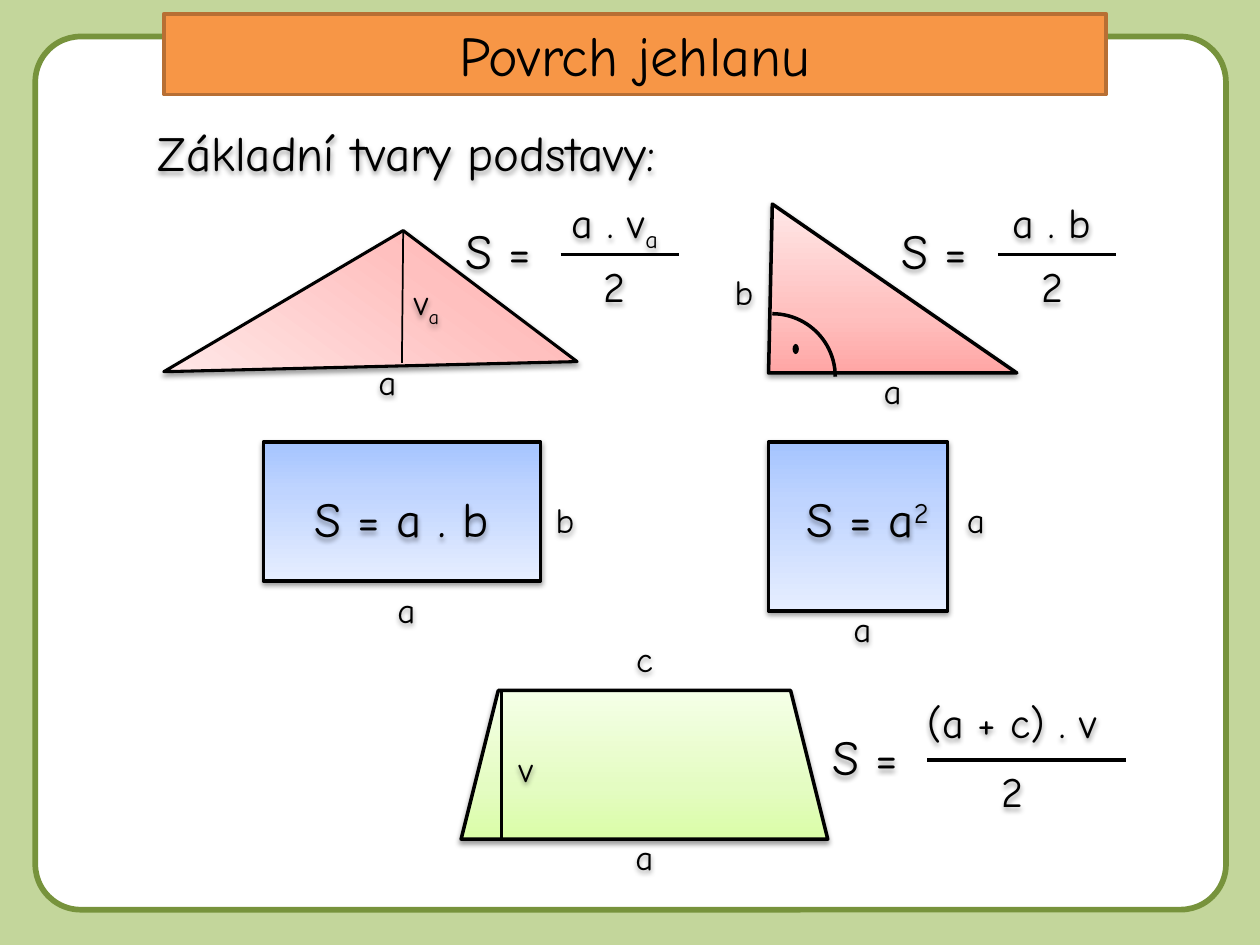
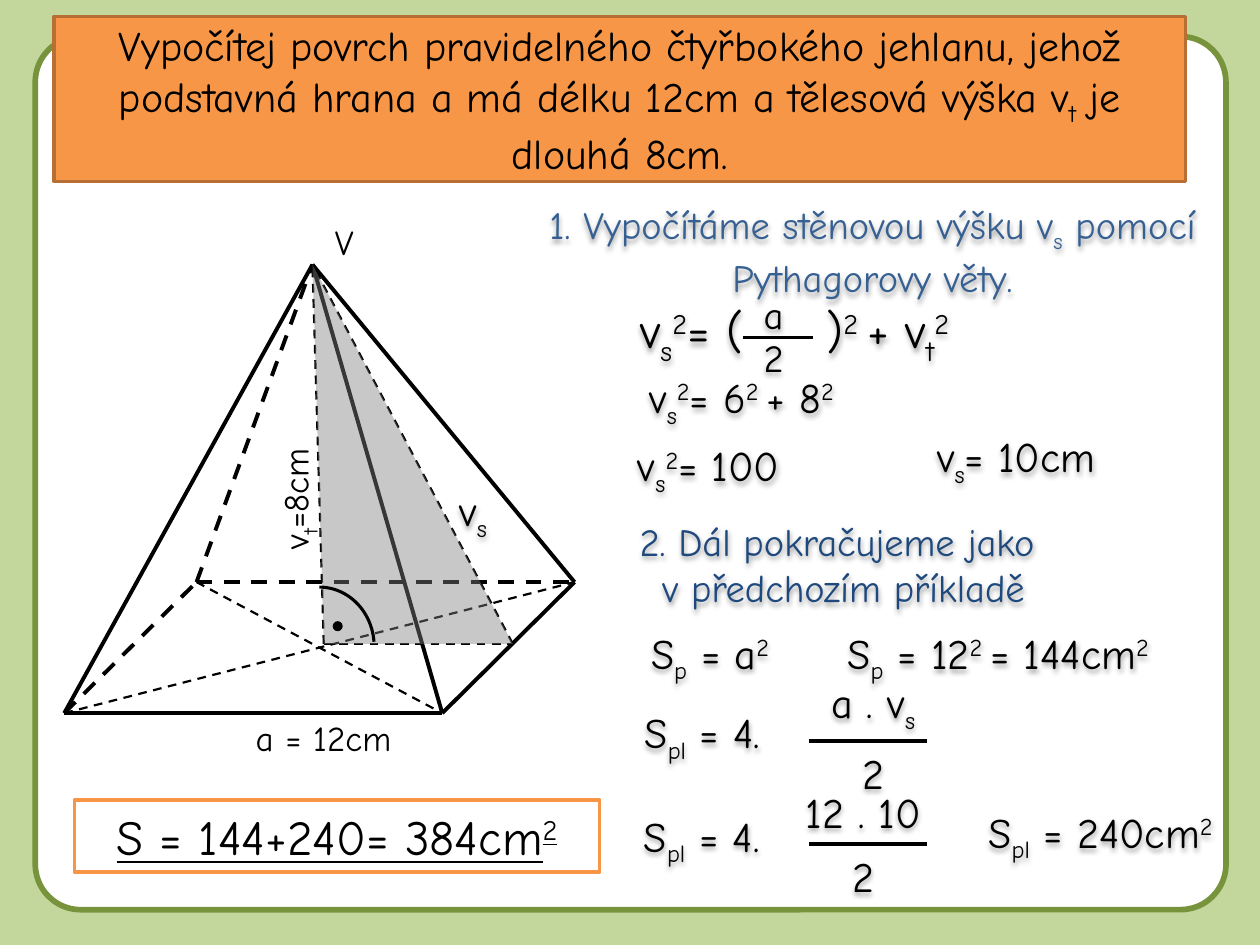
from dataclasses import dataclass

import pptx
import pptx.dml.color
import pptx.enum.dml
import pptx.enum.shapes
import pptx.enum.text
import pptx.oxml
import pptx.oxml.ns
import pptx.util

Inches = pptx.util.Inches
Pt = pptx.util.Pt
Preset = pptx.enum.shapes.MSO_SHAPE
Align = pptx.enum.text.PP_ALIGN
qn = pptx.oxml.ns.qn
NAMESPACE = pptx.oxml.ns.nsdecls("a")

FONT = "Comic Neue"
COLORS = {
    "background": "C3D69B",
    "frame": "77933C",
    "paper": "FFFFFF",
    "ink": "000000",
    "banner": "F79646",
    "banner_edge": "B76F34",
    "section": "376092",
    "next_section": "1F497D",
    "cut": "808080",
}
RED = ("FFA6A5", "FFC0BF", "FFE7E7")
BLUE = ("A4C4FF", "BFD4FF", "E6EEFF")
GREEN = ("DAFDA7", "E4FCC2", "F5FFE7")
GRADIENT_STOPS = (0, 35, 100)


@dataclass(frozen=True)
class Run:
    text: str
    baseline: int = 0


@dataclass(frozen=True)
class Label:
    left: float
    top: float
    width: float
    runs: tuple
    size: int = 20
    color: str = "ink"
    shadow: bool = True
    align: Align = Align.CENTER
    rotation: int = 0
    rows: int = 1
    inset: float = 0.1
    tab: float = 0


@dataclass(frozen=True)
class Box:
    left: float
    top: float
    width: float
    height: float
    preset: Preset = Preset.RECTANGLE
    fill: str = ""
    line: str = ""
    line_width: float = 2
    adjustments: tuple = ()


@dataclass(frozen=True)
class Segment:
    start: tuple
    end: tuple
    width: float = 2
    dashed: bool = False


@dataclass(frozen=True)
class Fraction:
    bar_start: float
    bar_end: float
    bar_y: float
    top: Label
    bottom: Label


def sub(text: str) -> Run:
    return Run(text, -25000)


def sup(text: str) -> Run:
    return Run(text, 30000)


def rgb(name: str) -> pptx.dml.color.RGBColor:
    return pptx.dml.color.RGBColor.from_string(COLORS[name])


def add_shadow(shape) -> None:
    shape.shadow.inherit = False
    effects = shape.element.spPr.find(qn("a:effectLst"))
    effects.append(pptx.oxml.parse_xml(
        f'<a:outerShdw {NAMESPACE} blurRad="{Pt(3.1)}" dist="{Pt(1.6)}" dir="5400000" rotWithShape="0">'
        f'<a:srgbClr val="{COLORS["ink"]}"><a:alpha val="38000"/></a:srgbClr></a:outerShdw>'))


def fill_gradient(shape, colors: tuple, angle: float) -> None:
    shape.fill.gradient()
    shape.fill.gradient_angle = angle
    stops = shape.element.spPr.find(qn("a:gradFill")).find(qn("a:gsLst"))
    for stop in list(stops):
        stops.remove(stop)
    for position, color in zip(GRADIENT_STOPS, colors):
        stops.append(pptx.oxml.parse_xml(
            f'<a:gs {NAMESPACE} pos="{position * 1000}"><a:srgbClr val="{color}"/></a:gs>'))


def style_figure(shape, colors: tuple, angle: float, line_width: float = 2) -> None:
    fill_gradient(shape, colors, angle)
    shape.line.color.rgb = rgb("ink")
    shape.line.width = Pt(line_width)
    add_shadow(shape)


def add_runs(paragraph, runs: tuple, size: int, color: str = "ink", underline: bool = False) -> None:
    for item in runs:
        part = Run(item) if isinstance(item, str) else item
        run = paragraph.add_run()
        run.text = part.text
        run.font.name = FONT
        run.font.size = Pt(size)
        run.font.color.rgb = rgb(color)
        if underline:
            run.font.underline = True
        if part.baseline:
            run._r.get_or_add_rPr().set("baseline", str(part.baseline))


def add_label(slide, label: Label) -> None:
    height = 0.1 + label.rows * label.size / 60
    shape = slide.shapes.add_textbox(
        Inches(label.left), Inches(label.top), Inches(label.width), Inches(height))
    shape.rotation = label.rotation
    frame = shape.text_frame
    frame.word_wrap = True
    frame.auto_size = pptx.enum.text.MSO_AUTO_SIZE.SHAPE_TO_FIT_TEXT
    frame.margin_left = Inches(label.inset)
    lines = label.runs if isinstance(label.runs[0], tuple) else (label.runs,)
    for index, runs in enumerate(lines):
        paragraph = frame.add_paragraph() if index else frame.paragraphs[0]
        paragraph.alignment = label.align
        if label.tab:
            paragraph._p.get_or_add_pPr().append(pptx.oxml.parse_xml(
                f'<a:tabLst {NAMESPACE}><a:tab pos="{Inches(label.tab)}" algn="l"/></a:tabLst>'))
        add_runs(paragraph, runs, label.size, label.color)
    if label.shadow:
        add_shadow(shape)


def add_box(slide, box: Box):
    shape = slide.shapes.add_shape(
        box.preset, Inches(box.left), Inches(box.top), Inches(box.width), Inches(box.height))
    for index, value in enumerate(box.adjustments):
        shape.adjustments[index] = value
    shape.shadow.inherit = False
    if box.fill:
        shape.fill.solid()
        shape.fill.fore_color.rgb = rgb(box.fill)
    else:
        shape.fill.background()
    if box.line:
        shape.line.color.rgb = rgb(box.line)
        shape.line.width = Pt(box.line_width)
    else:
        shape.line.fill.background()
    return shape


def add_text_box(slide, box: Box, runs: tuple, size: int, underline: bool = False) -> None:
    frame = add_box(slide, box).text_frame
    frame.word_wrap = True
    frame.paragraphs[0].alignment = Align.CENTER
    add_runs(frame.paragraphs[0], runs, size, underline=underline)


def add_segment(slide, segment: Segment) -> None:
    points = [Inches(value) for value in segment.start + segment.end]
    connector = slide.shapes.add_connector(pptx.enum.shapes.MSO_CONNECTOR.STRAIGHT, *points)
    connector.line.color.rgb = rgb("ink")
    connector.line.width = Pt(segment.width)
    if segment.dashed:
        connector.line.dash_style = pptx.enum.dml.MSO_LINE.DASH
    connector.element.spPr.append(pptx.oxml.parse_xml(f"<a:effectLst {NAMESPACE}/>"))


def add_fraction(slide, fraction: Fraction) -> None:
    add_segment(slide, Segment((fraction.bar_start, fraction.bar_y), (fraction.bar_end, fraction.bar_y)))
    add_label(slide, fraction.top)
    add_label(slide, fraction.bottom)


def add_polygon(slide, points: tuple):
    start, *others = [(Inches(x), Inches(y)) for x, y in points]
    builder = slide.shapes.build_freeform(*start, scale=1.0)
    builder.add_line_segments(others, close=True)
    return builder.convert_to_shape()


def add_framed_slide(presentation, banner: Box, title: tuple, size: int):
    slide = presentation.slides.add_slide(presentation.slide_layouts[6])
    slide.background.fill.solid()
    slide.background.fill.fore_color.rgb = rgb("background")
    add_box(slide, Box(0.28, 0.29, 9.45, 6.93, Preset.ROUNDED_RECTANGLE, "paper", "frame", 3.25, (0.052,)))
    add_text_box(slide, banner, title, size)
    return slide


def build_base_shapes(presentation) -> None:
    banner = Box(1.3, 0.11, 7.48, 0.64, fill="banner", line="banner_edge")
    slide = add_framed_slide(presentation, banner, ("Povrch jehlanu",), 32)

    for box in (Box(2.09, 3.51, 2.2, 1.1), Box(6.1, 3.51, 1.42, 1.34)):
        style_figure(add_box(slide, box), BLUE, 270)
    trapezoid = Box(3.66, 5.48, 2.91, 1.18, Preset.TRAPEZOID)
    style_figure(add_box(slide, trapezoid), GREEN, 90)
    right_triangle = ((6.13, 1.62), (6.1, 2.96), (8.07, 2.96))
    style_figure(add_polygon(slide, right_triangle), RED, 90)
    triangle = ((4.58, 2.87), (3.2, 1.83), (1.3, 2.95))
    style_figure(add_polygon(slide, triangle), RED, 234.1, 1.75)

    add_box(slide, Box(5.63, 2.49, 1, 1, Preset.ARC, line="ink"))
    add_box(slide, Box(6.29, 2.73, 0.05, 0.08, Preset.OVAL, "ink"))
    add_segment(slide, Segment((3.2, 1.83), (3.19, 2.88), 1))
    add_segment(slide, Segment((3.98, 5.48), (3.98, 6.66), 1.25))

    add_label(slide, Label(0.43, 0.92, 5.59, ("Základní tvary podstavy:",), 28))
    add_label(slide, Label(2.24, 3.83, 1.89, ("S = a . b",), 28))
    add_label(slide, Label(5.94, 3.83, 1.89, ("S = a", sup("2")), 28))
    for left, top in ((3.43, 1.7), (6.89, 1.7), (6.34, 5.72)):
        add_label(slide, Label(left, top, 1.18, ("S = ",), 28))
    for left, numerator in ((4.29, ("a . v", sub("a"))), (7.76, ("a . b",))):
        add_fraction(slide, Fraction(left + 0.16, left + 1.1, 2.02,
                                     Label(left, 1.51, 1.18, numerator, 24),
                                     Label(left, 2.02, 1.18, ("2",), 24)))
    add_fraction(slide, Fraction(7.36, 8.94, 6.03,
                                 Label(7.13, 5.48, 1.81, ("(a + c) . v",), 24),
                                 Label(7.68, 6.03, 0.71, ("2",), 24)))

    sides = (
        (6.81, 2.88, "a"), (5.63, 2.1, "b"), (2.8, 2.81, "a"), (2.95, 4.62, "a"),
        (6.57, 4.77, "a"), (4.21, 3.91, "b"), (7.47, 3.91, "a"),
        (3.9, 5.88, "v"), (4.84, 6.58, "a"), (4.84, 5.01, "c"),
    )
    for left, top, name in sides:
        add_label(slide, Label(left, top, 0.55, (name,)))
    add_label(slide, Label(3.11, 2.18, 0.55, ("v", sub("a"))))


def draw_pyramid(slide) -> None:
    apex, front_left, front_right = (2.48, 2.1), (0.51, 5.66), (3.51, 5.66)
    back_left, back_right = (1.56, 4.62), (4.56, 4.62)
    center, side_middle = (2.57, 5.11), (4.07, 5.11)
    for start, end in ((front_left, front_right), (front_right, back_right),
                       (front_left, apex), (apex, front_right), (apex, back_right)):
        add_segment(slide, Segment(start, end, 2.25))
    for start, end in ((back_left, back_right), (front_left, back_left), (back_left, apex)):
        add_segment(slide, Segment(start, end, 2.25, True))
    for start, end in ((side_middle, apex), (front_left, back_right), (back_left, front_right),
                       (center, apex), (center, side_middle)):
        add_segment(slide, Segment(start, end, 1.25, True))

    cut = add_polygon(slide, (apex, center, side_middle))
    cut.shadow.inherit = False
    cut.line.fill.background()
    cut.fill.solid()
    cut.fill.fore_color.rgb = rgb("cut")
    color = cut.element.spPr.find(qn("a:solidFill")).find(qn("a:srgbClr"))
    color.append(pptx.oxml.parse_xml(f'<a:alpha {NAMESPACE} val="43000"/>'))

    add_box(slide, Box(2.1, 4.66, 0.87, 0.94, Preset.ARC, line="ink", line_width=1.75,
                       adjustments=(162, 213.11)))
    add_box(slide, Box(2.64, 4.93, 0.08, 0.08, Preset.OVAL, "ink"))
    plain = {"shadow": False, "align": Align.LEFT}
    add_label(slide, Label(1.93, 5.64, 1.65, ("a = 12cm",), **plain))
    add_label(slide, Label(1.63, 3.53, 1.42, ("v", sub("t"), "=8cm"), rotation=270, **plain))
    add_label(slide, Label(2.56, 1.7, 0.47, ("V",), **plain))
    add_label(slide, Label(3.44, 3.8, 0.63, ("v", sub("s")), 24))


def build_example(presentation) -> None:
    banner = Box(0.43, 0.13, 8.98, 1.31, fill="banner", line="banner_edge")
    task = ("Vypočítej povrch pravidelného čtyřbokého jehlanu, jehož podstavná hrana a má "
            "délku 12cm a tělesová výška v", sub("t"), " je dlouhá 8cm.")
    slide = add_framed_slide(presentation, banner, task, 24)
    draw_pyramid(slide)

    height_squared = ("v", sub("s"), sup("2"))
    side_area = ("S", sub("pl"))
    labels = (
        Label(4.21, 1.55, 5.43, ("1. Vypočítáme stěnovou výšku v", sub("s"), " pomocí Pythagorovy věty."),
              22, "section", rows=2),
        Label(4.76, 2.33, 3.07, (*height_squared, "= (\t)", sup("2 "), "+ v", sub("t"), sup("2")),
              28, align=Align.LEFT, inset=0.32, tab=1.48),
        Label(4.47, 2.9, 2.83, (*height_squared, "= 6", sup("2 "), "+ 8", sup("2")), 24),
        Label(4.21, 3.44, 2.83, (*height_squared, "= 100"), 24),
        Label(6.65, 3.37, 2.83, ("v", sub("s"), "= 10cm"), 24),
        Label(3.98, 4.06, 5.43, (("2. Dál pokračujeme jako ",), ("v předchozím příkladě",)),
              22, "next_section", rows=2),
        Label(4.69, 4.93, 1.89, ("S", sub("p"), " = a", sup("2")), 24),
        Label(6.34, 4.93, 3.23, ("S", sub("p"), " = 12", sup("2 "), "= 144cm", sup("2 ")), 24),
        Label(4.92, 5.56, 1.42, (*side_area, " = 4. "), 24),
        Label(4.84, 6.38, 1.57, (*side_area, " = 4. "), 24),
        Label(7.28, 6.35, 2.91, (*side_area, " = 240cm", sup("2")), 24),
    )
    for label in labels:
        add_label(slide, label)

    fractions = (
        Fraction(5.9, 6.45, 2.68, Label(5.9, 2.26, 0.48, ("a",), 22), Label(5.9, 2.6, 0.48, ("2",), 22)),
        Fraction(6.42, 7.36, 5.88, Label(6.34, 5.32, 1.18, ("a . v", sub("s")), 24),
                 Label(6.34, 5.88, 1.18, ("2",), 24)),
        Fraction(6.42, 7.36, 6.7, Label(6.18, 6.19, 1.34, ("12 . 10",), 24),
                 Label(6.26, 6.7, 1.18, ("2",), 24)),
    )
    for fraction in fractions:
        add_fraction(slide, fraction)
    result = Box(0.59, 6.35, 4.17, 0.57, fill="paper", line="banner")
    add_text_box(slide, result, ("S = 144+240= 384cm", sup("2")), 28, underline=True)


def main() -> None:
    presentation = pptx.Presentation()
    presentation.slide_width = Inches(10)
    presentation.slide_height = Inches(7.5)
    build_base_shapes(presentation)
    build_example(presentation)
    presentation.save("out.pptx")


if __name__ == "__main__":
    main()
